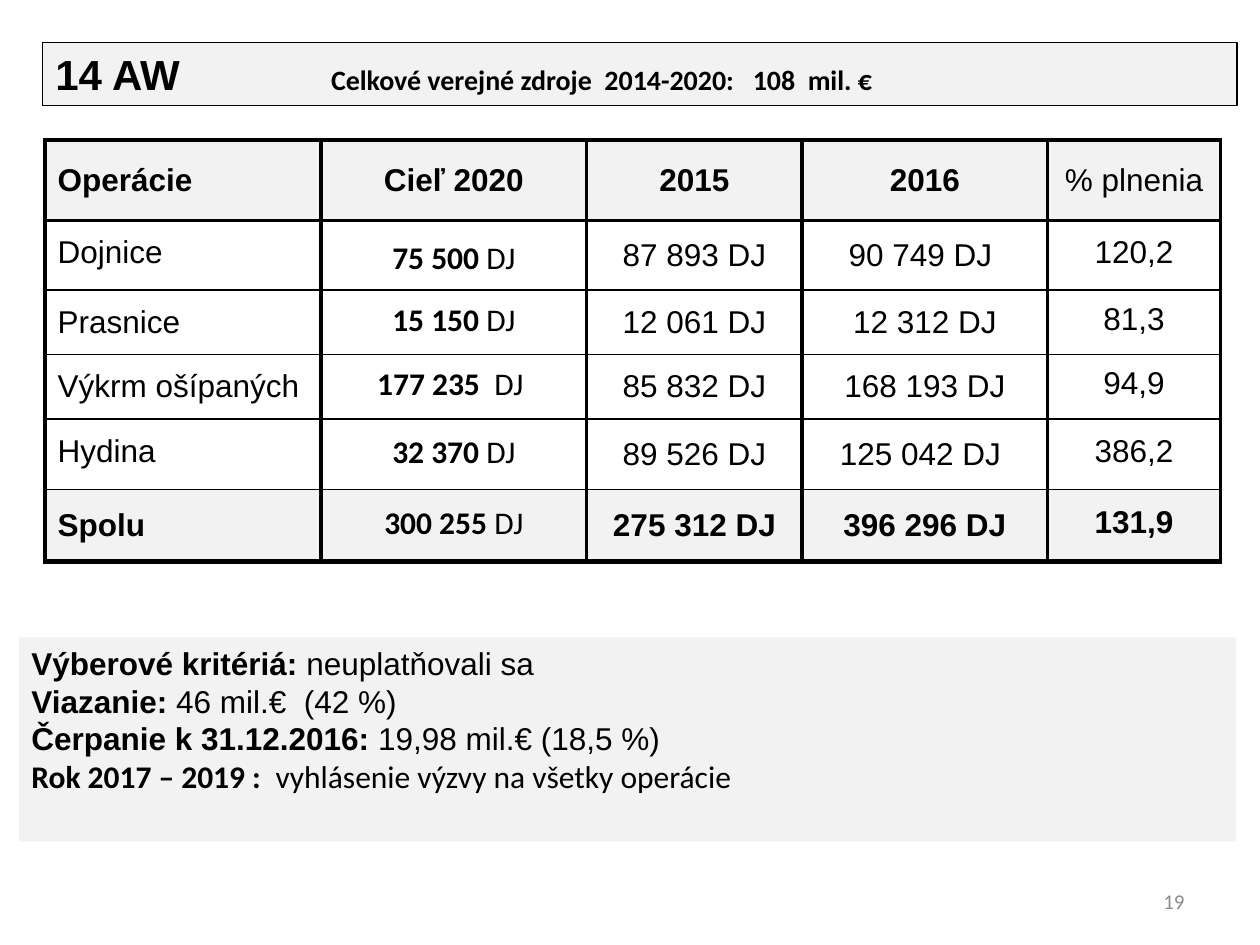
import pptx
import pptx.dml.color
import pptx.enum.text
import pptx.oxml
import pptx.oxml.ns
import pptx.util
from pptx.util import Cm

COLORS = {"text": "000000", "panel": "F2F2F2", "muted": "8C8C8C"}
ALIGN = pptx.enum.text.PP_ALIGN
ANCHOR = pptx.enum.text.MSO_ANCHOR
NAMESPACE = pptx.oxml.ns.nsdecls("a")


def color(name):
    return pptx.dml.color.RGBColor.from_string(COLORS[name])


def write_text(paragraph, text, font="Arial", size=18, bold=False, ink="text",
               align=ALIGN.LEFT, before=0, spacing=1.0):
    paragraph.alignment = align
    paragraph.space_before = pptx.util.Pt(before)
    paragraph.line_spacing = spacing
    run = paragraph.add_run()
    run.text = text
    run.font.name = font
    run.font.size = pptx.util.Pt(size)
    run.font.bold = bold
    run.font.color.rgb = color(ink)


class SlideBuilder:
    def __init__(self, presentation):
        self.slide = presentation.slides.add_slide(presentation.slide_layouts[1])

    def panel(self, shape, left, top, width, height, anchor):
        shape.left, shape.top, shape.width, shape.height = map(Cm, (left, top, width, height))
        shape.fill.solid()
        shape.fill.fore_color.rgb = color("panel")
        frame = shape.text_frame
        frame.word_wrap = True
        frame.auto_size = pptx.enum.text.MSO_AUTO_SIZE.NONE
        frame.vertical_anchor = anchor
        return frame

    def title(self, code, budget):
        shape = self.slide.shapes.title
        frame = self.panel(shape, 0.86, 0.86, 24.08, 1.27, ANCHOR.MIDDLE)
        shape.line.color.rgb = color("text")
        shape.line.width = pptx.util.Pt(0.75)
        paragraph = frame.paragraphs[0]
        write_text(paragraph, code + "\t", size=24, bold=True)
        write_text(paragraph, budget, font="Calibri", size=16, bold=True)
        paragraph._p.get_or_add_pPr().append(pptx.oxml.parse_xml(
            f'<a:tabLst {NAMESPACE}><a:tab pos="{Cm(5.56)}" algn="l"/></a:tabLst>'))

    def criteria(self, items):
        frame = self.panel(self.slide.placeholders[1], 0.38, 12.85, 24.54, 4.11, ANCHOR.TOP)
        for index, (label, value, font) in enumerate(items):
            paragraph = frame.add_paragraph() if index else frame.paragraphs[0]
            write_text(paragraph, label, font=font, bold=True)
            write_text(paragraph, value, font=font)
            properties = paragraph._p.get_or_add_pPr()
            properties.set("marL", "0")
            properties.set("indent", "0")
            properties.append(pptx.oxml.parse_xml(f"<a:buNone {NAMESPACE}/>"))

    def page_number(self, text):
        shape = self.slide.shapes.add_textbox(Cm(18.21), Cm(17.65), Cm(5.92), Cm(1.02))
        shape.text_frame.word_wrap = True
        shape.text_frame.vertical_anchor = ANCHOR.MIDDLE
        write_text(shape.text_frame.paragraphs[0], text, font="Calibri", size=12,
                   ink="muted", align=ALIGN.RIGHT)

    def table(self, left, top, widths, heights):
        table = self.slide.shapes.add_table(
            len(heights), len(widths), Cm(left), Cm(top), Cm(sum(widths)), Cm(sum(heights))).table
        table.first_row = table.horz_banding = False
        for column, width in zip(table.columns, widths):
            column.width = Cm(width)
        for row, height in zip(table.rows, heights):
            row.height = Cm(height)
        return table

    def cell(self, cell, top, bottom, filled, narrow):
        cell.vertical_anchor = ANCHOR.MIDDLE
        if narrow:
            cell.margin_left = cell.margin_right = Cm(0.18)
            cell.margin_top = cell.margin_bottom = Cm(0.1)
        for side, width in (("L", 2.25), ("R", 2.25), ("T", top), ("B", bottom)):
            cell._tc.get_or_add_tcPr().append(pptx.oxml.parse_xml(
                f'<a:ln{side} {NAMESPACE} w="{pptx.util.Pt(width)}"><a:solidFill>'
                f'<a:srgbClr val="{COLORS["text"]}"/></a:solidFill></a:ln{side}>'))
        if filled:
            cell.fill.solid()
            cell.fill.fore_color.rgb = color("panel")
        else:
            cell.fill.background()
        return cell.text_frame.paragraphs[0]

    def operations_table(self, header, rows):
        table = self.table(0.91, 2.82, [5.56, 5.36, 4.34, 4.95, 3.48],
                           [1.63, 1.4, 1.3, 1.3, 1.42, 1.45])
        for column, text in enumerate(header):
            paragraph = self.cell(table.cell(0, column), 2.25, 2.25, True, False)
            write_text(paragraph, text, bold=column < 4, before=3.6,
                       align=ALIGN.CENTER if column else ALIGN.LEFT)
        for index, (label, target, unit, *years, share) in enumerate(rows, 1):
            total = index == len(rows)
            top, bottom = 2.25 if index == 1 else 1, 3 if total else 1
            name, goal, *results, rate = [
                self.cell(table.cell(index, column), top, bottom, total, column > 0)
                for column in range(len(header))]
            write_text(name, label, bold=total, before=3.6,
                       spacing=0.75 if label in ("Dojnice", "Hydina") else 1.0)
            goal_format = dict(font="Calibri", align=ALIGN.CENTER, before=4.5,
                               spacing=1.15 if index == 1 else 0.75)
            write_text(goal, target, bold=True, **goal_format)
            write_text(goal, unit, **goal_format)
            for paragraph, text in zip(results, years):
                write_text(paragraph, text, bold=total, align=ALIGN.CENTER)
            write_text(rate, share, bold=total, align=ALIGN.CENTER, before=4.5, spacing=0.75)


def main():
    presentation = pptx.Presentation()
    presentation.slide_width, presentation.slide_height = Cm(25.4), Cm(19.05)
    builder = SlideBuilder(presentation)
    builder.title("14 AW", "Celkové verejné zdroje  2014-2020:   108  mil. €")
    builder.operations_table(
        ["Operácie", "Cieľ 2020", "2015", "2016", "% plnenia"],
        [
            ["Dojnice", "75 500 ", "DJ", "87 893 DJ", "90 749 DJ ", "120,2"],
            ["Prasnice", "15 150", " DJ", "12 061 DJ", "12 312 DJ", "81,3"],
            ["Výkrm ošípaných", "177 235", "  DJ ", "85 832 DJ", "168 193 DJ", "94,9"],
            ["Hydina", "32 370 ", "DJ", "89 526 DJ", "125 042 DJ ", "386,2"],
            ["Spolu", "300 255 ", "DJ", "275 312 DJ", "396 296 DJ", "131,9"],
        ])
    builder.criteria([
        ("Výberové kritériá: ", "neuplatňovali sa", "Arial"),
        ("Viazanie: ", "46 mil.€  (42 %)", "Arial"),
        ("Čerpanie k 31.12.2016: ", "19,98 mil.€ (18,5 %)", "Arial"),
        ("Rok 2017 – 2019 :  ", "vyhlásenie výzvy na všetky operácie", "Calibri"),
    ])
    builder.page_number("19")
    presentation.save("out.pptx")


if __name__ == "__main__":
    main()
